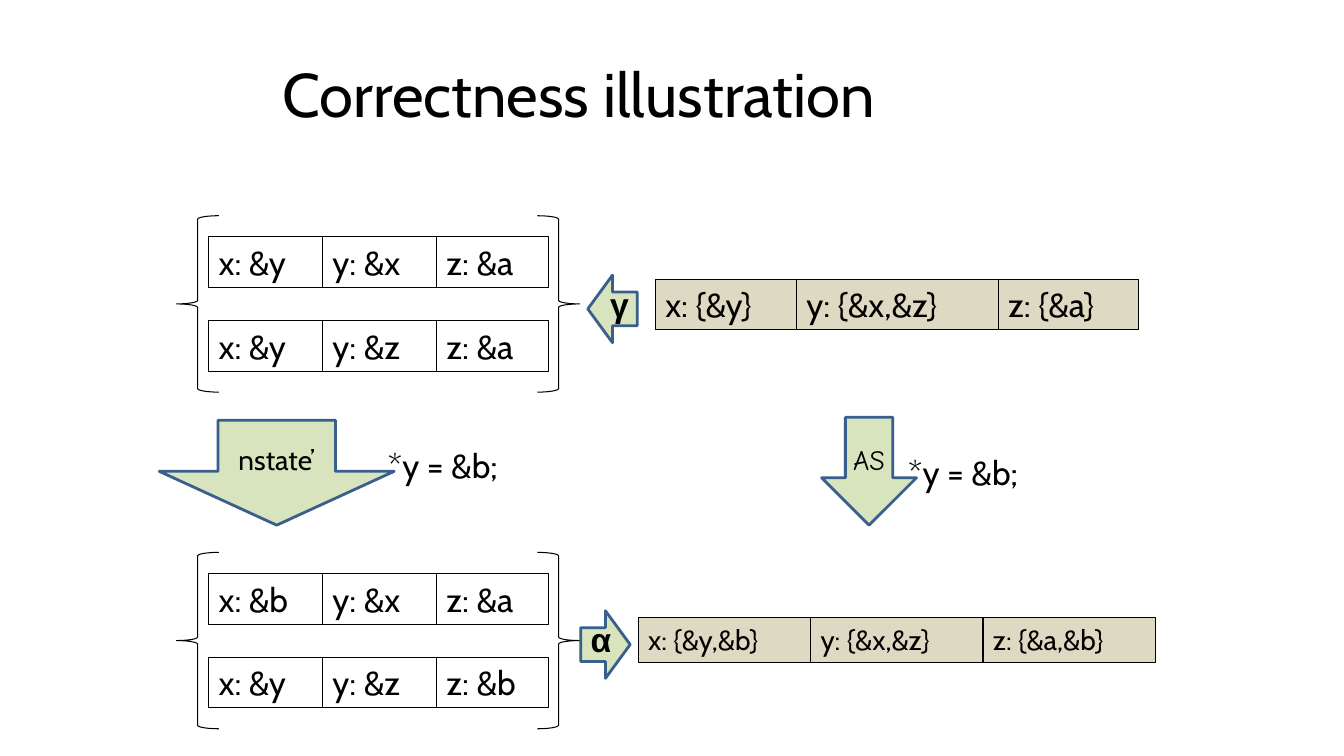
from collections import namedtuple

from pptx import Presentation
from pptx import util as u
from pptx.dml.color import RGBColor
from pptx.enum import shapes, text

BLACK = RGBColor(0x00, 0x00, 0x00)
TAN = RGBColor(0xDD, 0xD9, 0xC3)
GREEN = RGBColor(0xD7, 0xE4, 0xBD)
BLUE = RGBColor(0x3A, 0x5F, 0x8C)
FONT = "Cabin"
KIND = shapes.MSO_SHAPE
WIDTH, HEIGHT = 13.33, 7.5

Box = namedtuple("Box", "left top width height")


def lengths(box):
    return [u.Inches(value) for value in box]


def write(shape, words, size, font=FONT, bold=False, centred=False, wrap=True):
    frame = shape.text_frame
    frame.word_wrap = wrap
    frame.vertical_anchor = text.MSO_ANCHOR.MIDDLE if centred else text.MSO_ANCHOR.TOP
    para = frame.paragraphs[0]
    para.text = words
    para.alignment = text.PP_ALIGN.CENTER if centred else text.PP_ALIGN.LEFT
    para.font.name = font
    para.font.size = u.Pt(size)
    para.font.bold = bold
    para.font.color.rgb = BLACK


def add_label(page, box, words, size, centred=False):
    write(page.shapes.add_textbox(*lengths(box)), words, size, centred=centred)


def add_outline(page, kind, box, fill=None, line=BLACK, weight=0.75):
    shape = page.shapes.add_shape(kind, *lengths(box))
    shape.shadow.inherit = False
    if fill is None:
        shape.fill.background()
    else:
        shape.fill.solid()
        shape.fill.fore_color.rgb = fill
    shape.line.color.rgb = line
    shape.line.width = u.Pt(weight)
    return shape


def add_cells(page, box, words, shares, size=24, fill=None):
    left = box.left
    for word, share in zip(words, shares):
        width = box.width * share / sum(shares)
        cell = add_outline(page, KIND.RECTANGLE, Box(left, box.top, width, box.height), fill)
        write(cell, word, size)
        left += width


def add_state_set(page, box, states):
    brace_width = 0.105 * box.width
    cells_left = box.left + 0.08 * box.width
    for index, state in enumerate(states):
        top = box.top + (0.12 + 0.474 * index) * box.height
        row = Box(cells_left, top, 0.842 * box.width, 0.288 * box.height)
        add_cells(page, row, state, (1.13, 1.13, 1.11))
    add_outline(page, KIND.LEFT_BRACE, box._replace(width=brace_width))
    right = box.left + box.width - brace_width
    add_outline(page, KIND.RIGHT_BRACE, box._replace(left=right, width=brace_width))


def add_arrow(page, kind, box, words, size=20, font=FONT, bold=False, wrap=True):
    arrow = add_outline(page, kind, box, GREEN, BLUE, 2)
    write(arrow, words, size, font, bold, centred=True, wrap=wrap)
    return arrow


def add_mapping(page, kind, box, letter):
    arrow = add_arrow(page, kind, box, letter, 24, "Arial", bold=True)
    arrow.text_frame.margin_top = 0
    arrow.text_frame.margin_bottom = u.Inches(0.1)


def add_concrete_side(page, box):
    before = (("x: &y", "y: &x", "z: &a"), ("x: &y", "y: &z", "z: &a"))
    after = (("x: &b", "y: &x", "z: &a"), ("x: &y", "y: &z", "z: &b"))
    for top, states in ((box.top, before), (box.top + 3.34, after)):
        add_state_set(page, Box(box.left + 0.17, top, 4, 1.75), states)
    add_label(page, Box(box.left + 2.17, box.top + 2.22, 1.67, 0.5), "*y = &b;", 24)
    step = Box(box.left, box.top + 2.03, 2.33, 1.04)
    arrow = add_arrow(page, KIND.DOWN_ARROW, step, "nstate’")
    arrow.adjustments[1] = 0.513


def add_abstract_side(page, box):
    before = Box(box.left + 0.17, box.top, 4.79, 0.5)
    add_cells(page, before, ("x: {&y}", "y: {&x,&z}", "z: {&a}"), (1.4, 2, 1.39), fill=TAN)
    after = Box(box.left, box.top + 3.36, 5.13, 0.44)
    add_cells(page, after, ("x: {&y,&b}", "y: {&x,&z}", "z: {&a,&b}"), (1, 1, 1), 20, TAN)
    add_label(page, Box(box.left + 2.58, box.top + 1.66, 1.67, 0.5), "*y = &b;", 24)
    step = Box(box.left + 1.82, box.top + 1.37, 0.94, 1.07)
    add_arrow(page, KIND.DOWN_ARROW, step, "AS", font="Comic Neue", wrap=False)


def main():
    deck = Presentation()
    deck.slide_width, deck.slide_height = u.Inches(WIDTH), u.Inches(HEIGHT)
    page = deck.slides.add_slide(deck.slide_layouts[6])
    add_label(page, Box(0.67, 0.3, 10.14, 1.25), "Correctness illustration", 44, centred=True)
    add_concrete_side(page, Box(1.58, 2.14, 4.17, 5.09))
    add_abstract_side(page, Box(6.33, 2.77, 5.13, 3.8))
    add_mapping(page, KIND.LEFT_ARROW, Box(5.83, 2.73, 0.49, 0.67), "γ")
    add_mapping(page, KIND.RIGHT_ARROW, Box(5.76, 6.06, 0.49, 0.67), "α")
    deck.save("out.pptx")


if __name__ == "__main__":
    main()
